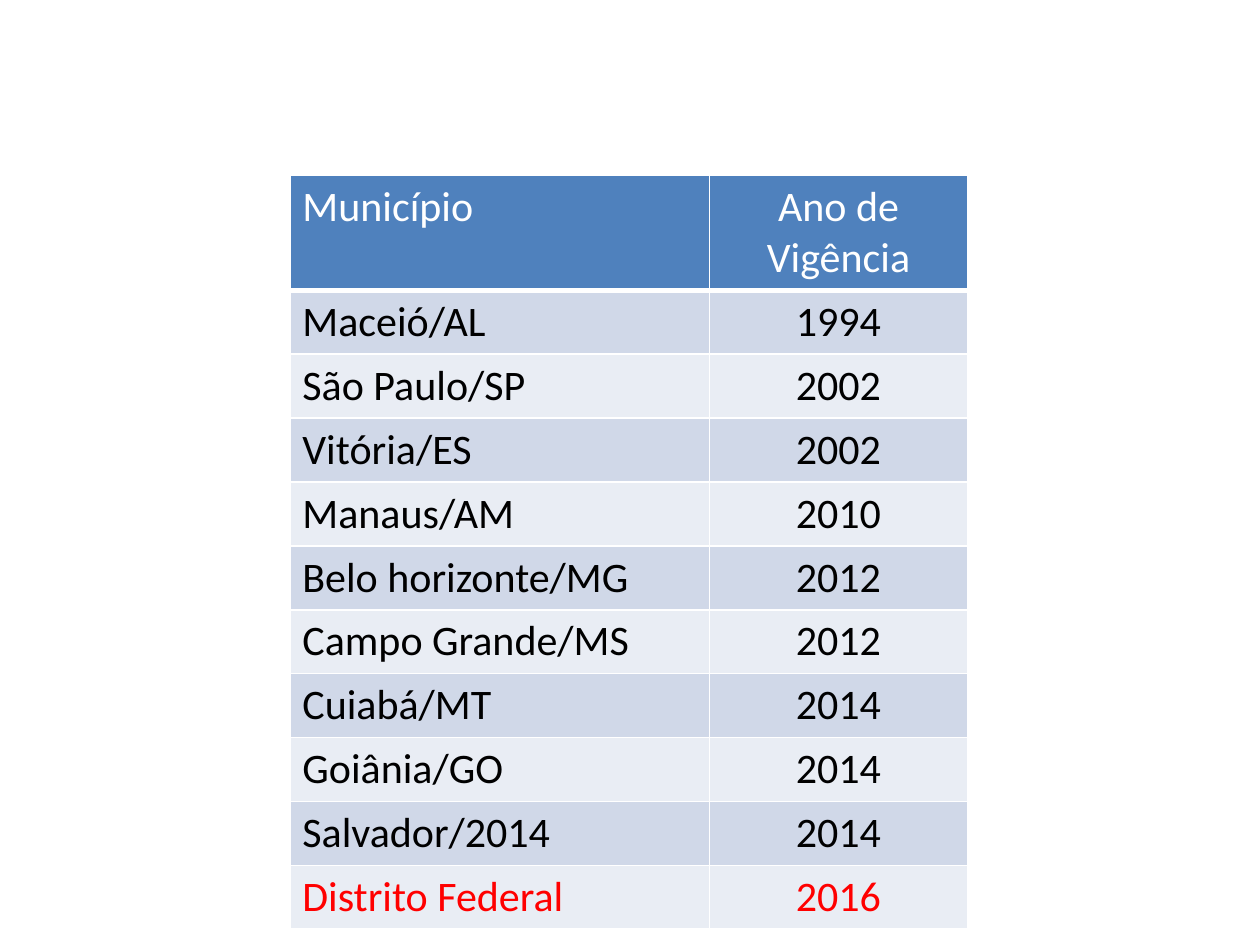
import pptx
import pptx.dml.color
import pptx.enum.text
import pptx.oxml
import pptx.oxml.ns
import pptx.util
from pptx.util import Inches

HEADER = ("Município", "Ano de Vigência")
MUNICIPALITIES = [
    ("Maceió/AL", "1994"),
    ("São Paulo/SP", "2002"),
    ("Vitória/ES", "2002"),
    ("Manaus/AM", "2010"),
    ("Belo horizonte/MG", "2012"),
    ("Campo Grande/MS", "2012"),
    ("Cuiabá/MT", "2014"),
    ("Goiânia/GO", "2014"),
    ("Salvador/2014", "2014"),
    ("Distrito Federal", "2016"),
]
COLUMN_WIDTHS = (3.33, 2.05)
ROW_HEIGHT = 0.41
ALIGNMENTS = (pptx.enum.text.PP_ALIGN.LEFT, pptx.enum.text.PP_ALIGN.CENTER)
HEADER_FILL = "4F81BD"
BAND_FILLS = ("E9EDF4", "D0D8E8")
WHITE, BLACK, RED = "FFFFFF", "000000", "FF0000"


def paint(color_format, color):
    color_format.rgb = pptx.dml.color.RGBColor.from_string(color)


def add_borders(cell, bottom_width):
    properties = cell._tc.get_or_add_tcPr()
    widths = {"lnL": 1, "lnR": 1, "lnT": 1, "lnB": bottom_width}
    for position, (side, width) in enumerate(widths.items()):
        border = pptx.oxml.parse_xml(
            f'<a:{side} {pptx.oxml.ns.nsdecls("a")} w="{pptx.util.Pt(width)}">'
            f'<a:solidFill><a:srgbClr val="{WHITE}"/></a:solidFill></a:{side}>'
        )
        properties.insert(position, border)


def fill_cell(cell, text, alignment, fill, color, bottom_width):
    cell.text = text
    cell.fill.solid()
    paint(cell.fill.fore_color, fill)
    paragraph = cell.text_frame.paragraphs[0]
    paragraph.alignment = alignment
    paragraph.font.name = "Calibri"
    paragraph.font.size = pptx.util.Pt(24)
    paragraph.font.bold = False
    paint(paragraph.font.color, color)
    add_borders(cell, bottom_width)


def row_style(index, last):
    if index == 0:
        return HEADER_FILL, WHITE, 3
    return BAND_FILLS[index % 2], RED if index == last else BLACK, 1


def main():
    presentation = pptx.Presentation()
    presentation.slide_width = Inches(10)
    presentation.slide_height = Inches(7.5)
    slide = presentation.slides.add_slide(presentation.slide_layouts[6])

    rows = [HEADER, *MUNICIPALITIES]
    table = slide.shapes.add_table(
        len(rows), len(HEADER), Inches(2.3), Inches(1.39),
        Inches(sum(COLUMN_WIDTHS)), Inches(ROW_HEIGHT * len(rows)),
    ).table
    for column, width in zip(table.columns, COLUMN_WIDTHS):
        column.width = Inches(width)
    for index, values in enumerate(rows):
        table.rows[index].height = Inches(ROW_HEIGHT)
        style = row_style(index, len(rows) - 1)
        for column, (text, alignment) in enumerate(zip(values, ALIGNMENTS)):
            fill_cell(table.cell(index, column), text, alignment, *style)

    presentation.save("out.pptx")


if __name__ == "__main__":
    main()
